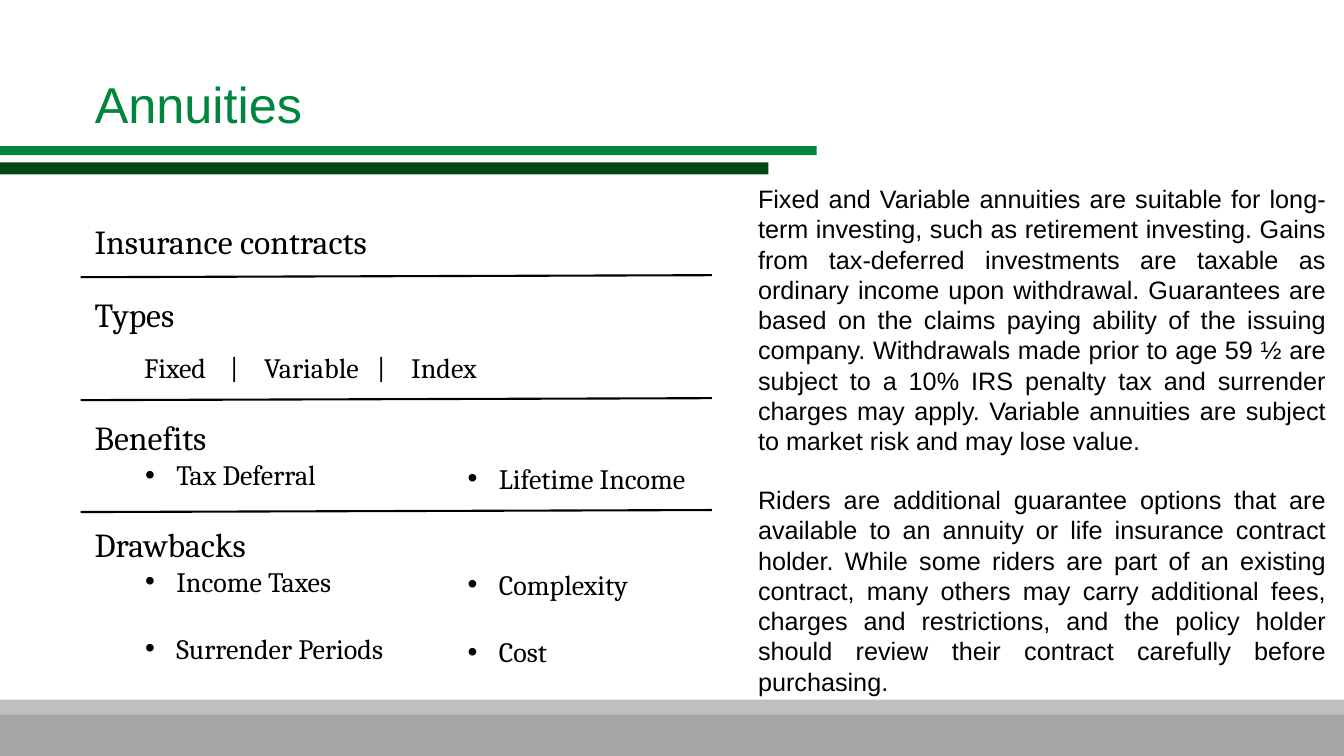
from lxml import etree
from pptx import Presentation
from pptx.dml.color import RGBColor
from pptx.enum.shapes import MSO_CONNECTOR as Connector, MSO_SHAPE as Shape
from pptx.enum.text import MSO_ANCHOR as Anchor, MSO_AUTO_SIZE as AutoSize, PP_ALIGN as Align
from pptx.oxml.ns import qn
from pptx.util import Inches, Pt

COLORS = {
    "text": "000000",
    "green": "00853E",
    "dark green": "004812",
    "light gray": "BFBFBF",
    "gray": "A5A5A5",
}
HEADING, ITEM, NOTE = 24, 20, 18
GAP = 23.4          # height of one line of item text, in points
SUB_INDENT = 0.81   # text of a second-level bullet
HANGING = 0.31
TYPE_TABS = (0.49, 1.34, 1.68, 2.8, 3.14)

SUITABILITY = (
    "Fixed and Variable annuities are suitable for long-term investing, such as "
    "retirement investing. Gains from tax-deferred investments are taxable as ordinary "
    "income upon withdrawal. Guarantees are based on the claims paying ability of the "
    "issuing company. Withdrawals made prior to age 59 ½ are subject to a 10% IRS "
    "penalty tax and surrender charges may apply. Variable annuities are subject to "
    "market risk and may lose value."
)
RIDERS = (
    "Riders are additional guarantee options that are available to an annuity or life "
    "insurance contract holder. While some riders are part of an existing contract, many "
    "others may carry additional fees, charges and restrictions, and the policy holder "
    "should review their contract carefully before purchasing."
)


def rgb(name):
    return RGBColor.from_string(COLORS[name])


def add_para(frame, text, size=ITEM, font="Cambria", color="text", align=Align.LEFT,
             before=0, spacing=None, bullet=None, tabs=()):
    """Fill the empty first paragraph, or add one; bullet is its text indent."""
    para = frame.paragraphs[0] if not frame.text else frame.add_paragraph()
    props = para._p.get_or_add_pPr()
    if bullet:
        props.set("marL", str(Inches(bullet)))
        props.set("indent", str(-Inches(HANGING)))
        etree.SubElement(props, qn("a:buFont"), typeface="Arial")
        etree.SubElement(props, qn("a:buChar"), char="•")
    if tabs:
        stops = etree.SubElement(props, qn("a:tabLst"))
        for stop in tabs:
            etree.SubElement(stops, qn("a:tab"), pos=str(Inches(stop)), algn="l")
    para.alignment = align
    if before:
        para.space_before = Pt(before)
    if spacing:
        para.line_spacing = spacing
    span = para.add_run()
    span.text = text
    span.font.size = Pt(size)
    span.font.name = font
    span.font.color.rgb = rgb(color)


def add_frame(page, left, top, width, height):
    box = page.shapes.add_textbox(Inches(left), Inches(top), Inches(width), Inches(height))
    box.text_frame.word_wrap = True
    return box.text_frame


def add_band(page, left, top, width, height, color):
    band = page.shapes.add_shape(
        Shape.RECTANGLE, Inches(left), Inches(top), Inches(width), Inches(height))
    band.shadow.inherit = False
    band.fill.solid()
    band.fill.fore_color.rgb = rgb(color)
    band.line.fill.background()


def add_divider(page, left, top, width):
    line = page.shapes.add_connector(
        Connector.STRAIGHT, Inches(left), Inches(top),
        Inches(left + width), Inches(top - 0.02))
    line.line.color.rgb = rgb("text")
    line.line.width = Pt(1.5)
    etree.SubElement(line._element.spPr, qn("a:effectLst"))


def add_title(page, text, left, top, width, height):
    title = page.shapes.title
    title.left, title.top = Inches(left), Inches(top)
    title.width, title.height = Inches(width), Inches(height)
    frame = title.text_frame
    frame.auto_size = AutoSize.NONE
    frame.vertical_anchor = Anchor.TOP
    add_para(frame, text, size=36, font="Arial", color="green")


def add_outline(page, left, top, width, height):
    # Headings with the left column of points
    frame = add_frame(page, left, top, width, height)
    add_para(frame, "Insurance contracts", HEADING)
    add_para(frame, "Types", HEADING, before=GAP)
    add_para(frame, "\tFixed\t|\tVariable\t|\tIndex", spacing=1.5, tabs=TYPE_TABS)
    add_para(frame, "Benefits", HEADING, before=GAP)
    add_para(frame, "Tax Deferral", bullet=SUB_INDENT)
    add_para(frame, "Drawbacks", HEADING, before=GAP)
    add_para(frame, "Income Taxes", bullet=SUB_INDENT)
    add_para(frame, "Surrender Periods", spacing=2.0, bullet=SUB_INDENT)

    # Right column of points
    benefit = add_frame(page, left + 3.7, top + 2.39, 2.56, 0.44)
    add_para(benefit, "Lifetime Income", bullet=HANGING)
    drawbacks = add_frame(page, left + 3.2, top + 3.44, 2.44, 1.41)
    add_para(drawbacks, "Complexity", bullet=SUB_INDENT)
    add_para(drawbacks, "Cost", spacing=2.0, bullet=SUB_INDENT)

    # Lines between the sections
    for offset in (0.61, 1.83, 2.94):
        add_divider(page, left - 0.04, top + offset, 6.26)


def add_disclosure(page, left, top, width, height):
    frame = add_frame(page, left, top, width, height)
    add_para(frame, SUITABILITY, NOTE, "Arial", align=Align.JUSTIFY)
    add_para(frame, RIDERS, NOTE, "Arial", align=Align.JUSTIFY, before=20.7)


def main():
    deck = Presentation()
    deck.slide_width, deck.slide_height = Inches(13.33), Inches(7.5)
    page = deck.slides.add_slide(deck.slide_layouts[5])

    # Footer and title bands
    add_band(page, 0, 7, 13.33, 0.5, "gray")
    add_band(page, 0, 6.94, 13.33, 0.15, "light gray")
    add_band(page, 0, 1.45, 8.1, 0.09, "green")
    add_band(page, 0, 1.61, 7.62, 0.12, "dark green")

    add_title(page, "Annuities", 0.84, 0.68, 6.89, 0.71)
    add_outline(page, 0.84, 2.14, 6.81, 4.58)
    add_disclosure(page, 7.42, 1.77, 5.83, 5.25)
    deck.save("out.pptx")


if __name__ == "__main__":
    main()
